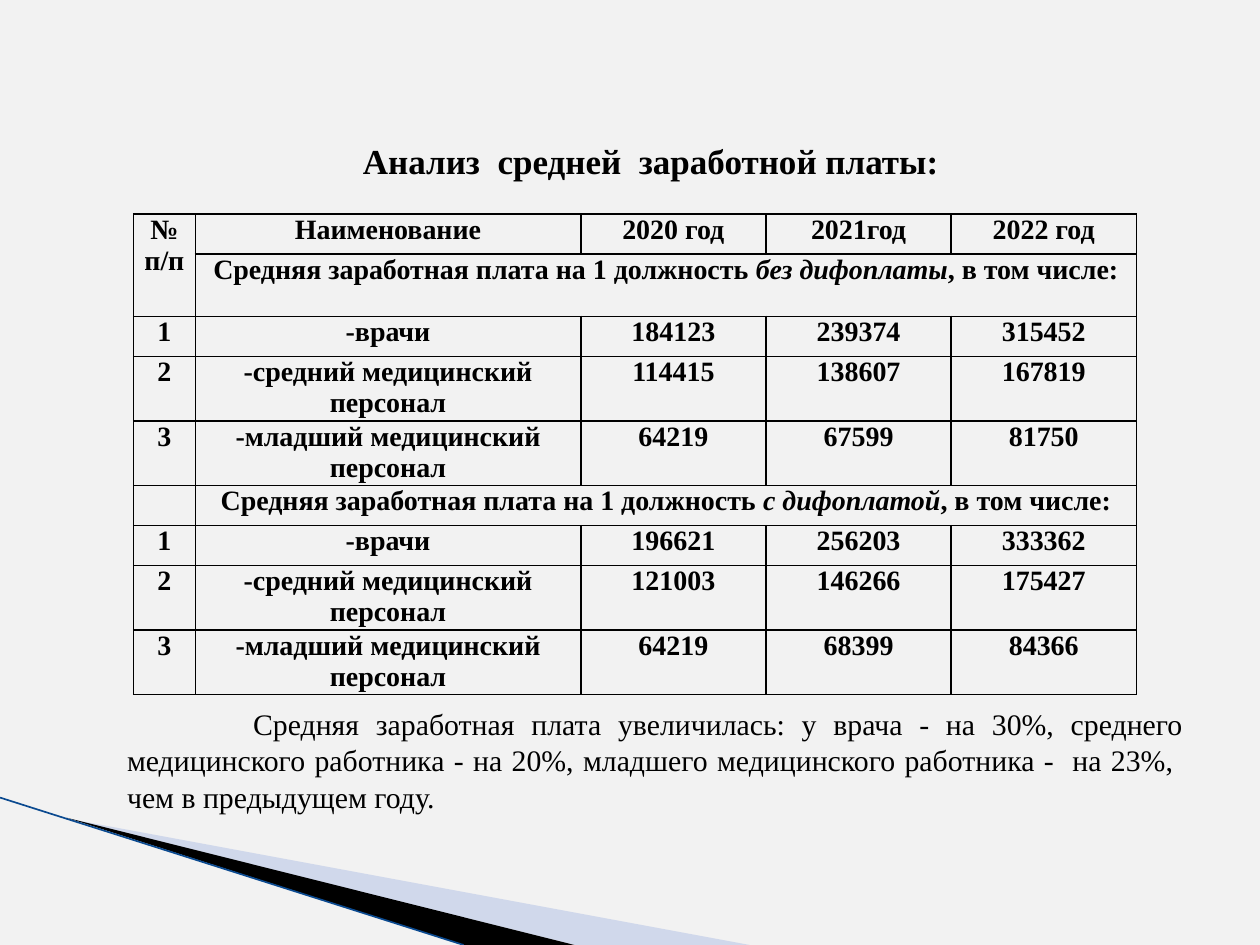
from dataclasses import dataclass
from lxml.etree import SubElement
from pptx import Presentation
from pptx.dml.color import RGBColor as Color
from pptx.enum.shapes import MSO_CONNECTOR as Connector
from pptx.enum.text import MSO_ANCHOR as Anchor, PP_ALIGN as Align
from pptx.oxml.ns import qn
from pptx.util import Inches, Pt


@dataclass(frozen=True)
class Theme:
    font: str = "Times New Roman"
    background: str = "F2F2F2"
    ink: str = "000000"
    wedge: str = "9DB2E1"
    edge: str = "0B4A90"
    title_size: float = 20
    table_size: float = 16
    body_size: float = 17
    body_leading: float = 20.6
    rule: float = 1
    edge_width: float = 0.95


def apply(target, formats):
    for name, value in formats.items():
        setattr(target, name, value)


class SlideBuilder:
    COLUMNS, ROWS = 100, 75

    def __init__(self, deck, theme):
        self.theme = theme
        self.column = deck.slide_width / self.COLUMNS
        self.row = deck.slide_height / self.ROWS
        self.slide = deck.slides.add_slide(deck.slide_layouts[5])
        fill = self.slide.background.fill
        fill.solid()
        fill.fore_color.rgb = Color.from_string(theme.background)

    def x(self, columns):
        return round(columns * self.column)

    def y(self, rows):
        return round(rows * self.row)

    def place(self, left, top, width, height):
        return self.x(left), self.y(top), self.x(width), self.y(height)

    def fill_para(self, para, text, size, bold=False, **formats):
        apply(para, formats)
        for index, part in enumerate(text.split("*")):
            if part:
                span = para.add_run()
                span.text = part
                apply(span.font, {"name": self.theme.font, "size": Pt(size),
                                  "bold": bold, "italic": index % 2 == 1})
                span.font.color.rgb = Color.from_string(self.theme.ink)

    def title(self, text, area):
        box = self.slide.shapes.title
        apply(box, dict(zip(("left", "top", "width", "height"), self.place(*area))))
        apply(box.text_frame, {"word_wrap": True, "vertical_anchor": Anchor.MIDDLE})
        self.fill_para(box.text_frame.paragraphs[0], text, self.theme.title_size,
                       bold=True, alignment=Align.CENTER)

    def body(self, text, area, indent):
        frame = self.slide.shapes.add_textbox(*self.place(*area)).text_frame
        apply(frame, {"word_wrap": True, "vertical_anchor": Anchor.BOTTOM})
        para = frame.paragraphs[0]
        para._p.get_or_add_pPr().set("indent", str(self.x(indent)))
        self.fill_para(para, text, self.theme.body_size, alignment=Align.JUSTIFY,
                       line_spacing=Pt(self.theme.body_leading))

    def wedge(self, points, color, opacity=100):
        corners = [(self.x(column), self.y(row)) for column, row in points]
        outline = self.slide.shapes.build_freeform(*corners[0])
        outline.add_line_segments(corners[1:], close=True)
        shape = outline.convert_to_shape()
        shape.shadow.inherit = False
        shape.line.fill.background()
        shape.fill.solid()
        shape.fill.fore_color.rgb = Color.from_string(color)
        if opacity < 100:
            tone = shape._element.spPr.find(f"{qn('a:solidFill')}/{qn('a:srgbClr')}")
            SubElement(tone, qn("a:alpha"), val=str(opacity * 1000))

    def edge(self, start, end):
        line = self.slide.shapes.add_connector(
            Connector.STRAIGHT, self.x(start[0]), self.y(start[1]),
            self.x(end[0]), self.y(end[1]))
        line.line.color.rgb = Color.from_string(self.theme.edge)
        line.line.width = Pt(self.theme.edge_width)
        SubElement(line._element.spPr, qn("a:effectLst"))

    def style_cell(self, cell):
        apply(cell, {"margin_left": Inches(0.07), "margin_right": Inches(0.07),
                     "margin_top": 0, "margin_bottom": 0})
        properties = cell._tc.get_or_add_tcPr()
        for side in ("lnL", "lnR", "lnT", "lnB"):
            border = SubElement(properties, qn(f"a:{side}"), w=str(Pt(self.theme.rule)))
            paint = SubElement(border, qn("a:solidFill"))
            SubElement(paint, qn("a:srgbClr"), val=self.theme.ink)
        cell.fill.background()

    def table(self, records, left, top, widths, heights, merges):
        area = self.place(left, top, sum(widths), sum(heights))
        table = self.slide.shapes.add_table(len(heights), len(widths), *area).table
        apply(table, {"first_row": False, "horz_banding": False})
        for column, width in zip(table.columns, widths):
            column.width = self.x(width)
        for row, height in zip(table.rows, heights):
            row.height = self.y(height)
        for cell in table.iter_cells():
            self.style_cell(cell)
        for first, last in merges:
            table.cell(*first).merge(table.cell(*last))
        for row, record in enumerate(records):
            for column, text in enumerate(record):
                frame = table.cell(row, column).text_frame
                for index, line in enumerate(text.split("\n") if text else []):
                    para = frame.add_paragraph() if index else frame.paragraphs[0]
                    self.fill_para(para, line, self.theme.table_size, bold=True,
                                   alignment=Align.CENTER)


STAFF = ("-врачи", "-средний медицинский персонал", "-младший медицинский персонал")
BASE_PAY = (("184123", "239374", "315452"), ("114415", "138607", "167819"),
            ("64219", "67599", "81750"))
FULL_PAY = (("196621", "256203", "333362"), ("121003", "146266", "175427"),
            ("64219", "68399", "84366"))


def section(heading, pay):
    caption = f"Средняя заработная плата на 1 должность *{heading}*, в том числе:"
    people = [(str(number), name, *sums)
              for number, (name, sums) in enumerate(zip(STAFF, pay), 1)]
    return [("", caption), *people]


def main():
    deck = Presentation()
    apply(deck, {"slide_width": Inches(10), "slide_height": Inches(7.5)})
    theme = Theme()
    page = SlideBuilder(deck, theme)
    page.wedge([(5.5, 65), (59.5, 75), (45.6, 75)], theme.wedge, opacity=40)
    page.wedge([(5.3, 64.9), (45.6, 75), (36.8, 75)], theme.ink)
    page.edge((0, 63.3), (36.8, 75))
    page.title("Анализ  средней  заработной платы:", (8.3, 10.2, 86.7, 5))
    header = ("№\nп/п", "Наименование", "2020 год", "2021год", "2022 год")
    single, double = 3.18, 5.12
    page.table(
        [header, *section("без дифоплаты", BASE_PAY), *section("с дифоплатой", FULL_PAY)],
        left=10.6, top=17, widths=[4.9, 30.6] + [14.7] * 3,
        heights=[single, 4.9] + [single, double, double, single] + [single, double, double],
        merges=[((0, 0), (1, 0)), ((1, 1), (1, 4)), ((5, 1), (5, 4))])
    page.body("Средняя заработная плата увеличилась: у врача - на 30%, среднего "
              "медицинского работника - на 20%, младшего медицинского работника -  "
              "на 23%,  чем в предыдущем году.", (9.1, 52.5, 85.8, 12.6), indent=10)
    deck.save("out.pptx")


if __name__ == "__main__":
    main()
